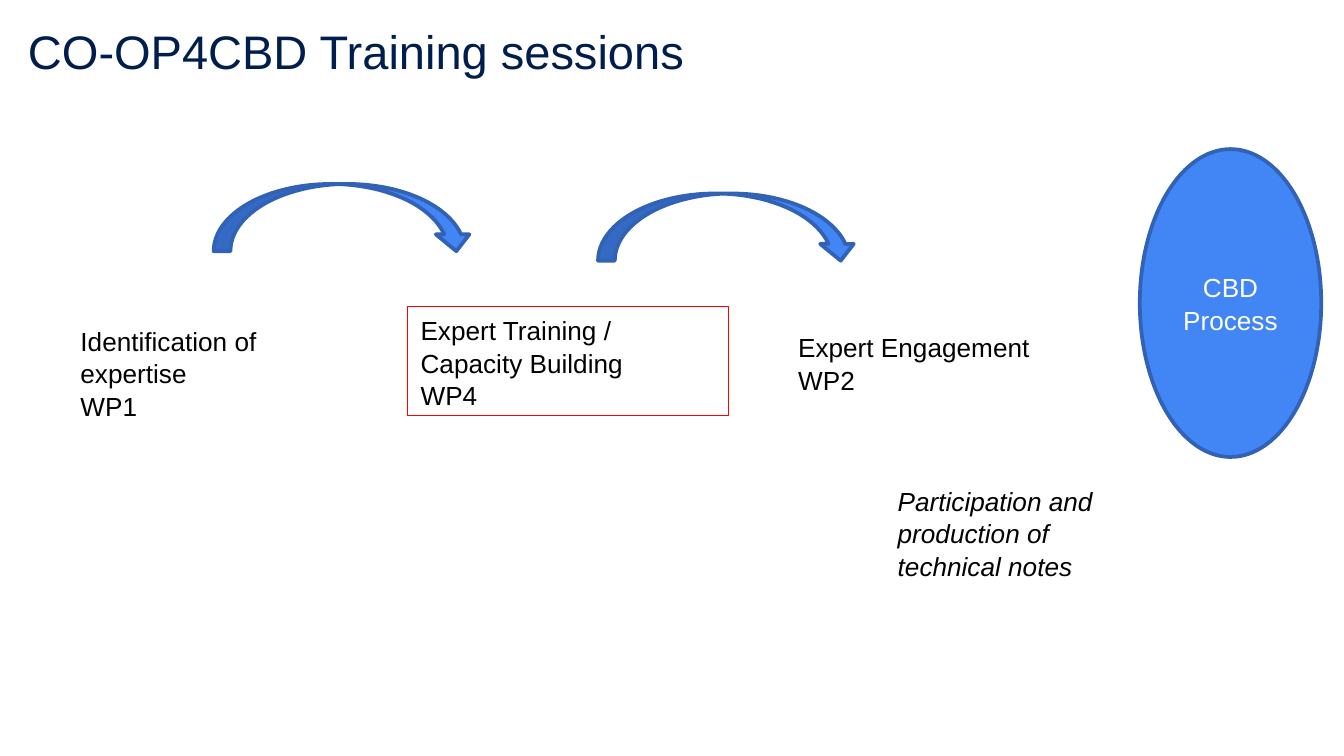
from pptx import Presentation, util as u
from pptx.dml.color import RGBColor
from pptx.enum import shapes, text

NAVY = RGBColor(0x00, 0x1E, 0x4D)
BLACK = RGBColor(0x00, 0x00, 0x00)
WHITE = RGBColor(0xFF, 0xFF, 0xFF)
RED = RGBColor(0xFF, 0x00, 0x00)
BLUE = RGBColor(0x42, 0x85, 0xF4)
DARK_BLUE = RGBColor(0x31, 0x62, 0xB5)

# Content: paragraphs, then left, top, width, height in points
TITLE = (["CO-OP4CBD Training sessions"], (7.9, 4.3, 671, 45.4))
TRAINING = (["Expert Training / Capacity Building", "WP4"], (218.2, 164.2, 172.1, 58.3))
PROCESS = (["CBD Process"], (610.6, 79.9, 97.2, 164.9))
LABELS = [
    (["Identification of expertise", "WP1"], (36, 169.9, 164.2, 58.3), {}),
    (["Expert Engagement", "WP2"], (420.5, 173.5, 159.1, 41), {}),
    (["Participation and production of technical notes"],
     (473.8, 255.6, 147.6, 58.3), {"italic": True}),
]
ARROWS = [(114.5, 98.6, 139, 36), (320.4, 103.7, 139, 36)]

BODY_FORMAT = {"name": "Arial", "size": u.Pt(14)}
TITLE_FORMAT = {"name": "Arial", "size": u.Pt(25.2)}
LINE_SPACING = 1.04

presentation = Presentation()
presentation.slide_width, presentation.slide_height = u.Pt(720), u.Pt(405)
slide = presentation.slides.add_slide(presentation.slide_layouts[6])


def points(box):
    return [u.Pt(length) for length in box]


def write(shape, paragraphs, color, formats, align=text.PP_ALIGN.LEFT,
          anchor=text.MSO_ANCHOR.TOP, spacing=LINE_SPACING):
    frame = shape.text_frame
    frame.word_wrap = True
    frame.vertical_anchor = anchor
    frame.text = "\n".join(paragraphs)
    for paragraph in frame.paragraphs:
        paragraph.alignment = align
        paragraph.line_spacing = spacing
        for run in paragraph.runs:
            run.font.color.rgb = color
            for name, value in formats.items():
                setattr(run.font, name, value)


def add_shape(kind, box, fill, line, width):
    shape = slide.shapes.add_shape(kind, *points(box))
    shape.shadow.inherit = False
    if fill is None:
        shape.fill.background()
    else:
        shape.fill.solid()
        shape.fill.fore_color.rgb = fill
    shape.line.color.rgb = line
    shape.line.width = u.Pt(width)
    return shape


# Title
paragraphs, box = TITLE
write(slide.shapes.add_textbox(*points(box)), paragraphs, NAVY, TITLE_FORMAT,
      anchor=text.MSO_ANCHOR.MIDDLE, spacing=1.0)

# Highlighted training step
paragraphs, box = TRAINING
training = add_shape(shapes.MSO_SHAPE.RECTANGLE, box, None, RED, 0.75)
write(training, paragraphs, BLACK, BODY_FORMAT)

# Process ellipse
paragraphs, box = PROCESS
process = add_shape(shapes.MSO_SHAPE.OVAL, box, BLUE, DARK_BLUE, 2)
write(process, paragraphs, WHITE, BODY_FORMAT, text.PP_ALIGN.CENTER,
      text.MSO_ANCHOR.MIDDLE)

# Curved arrows between the steps
for box in ARROWS:
    add_shape(shapes.MSO_SHAPE.CURVED_DOWN_ARROW, box, BLUE, DARK_BLUE, 2)

# Plain step labels
for paragraphs, box, extra in LABELS:
    label = slide.shapes.add_textbox(*points(box))
    write(label, paragraphs, BLACK, {**BODY_FORMAT, **extra})

presentation.save("out.pptx")
